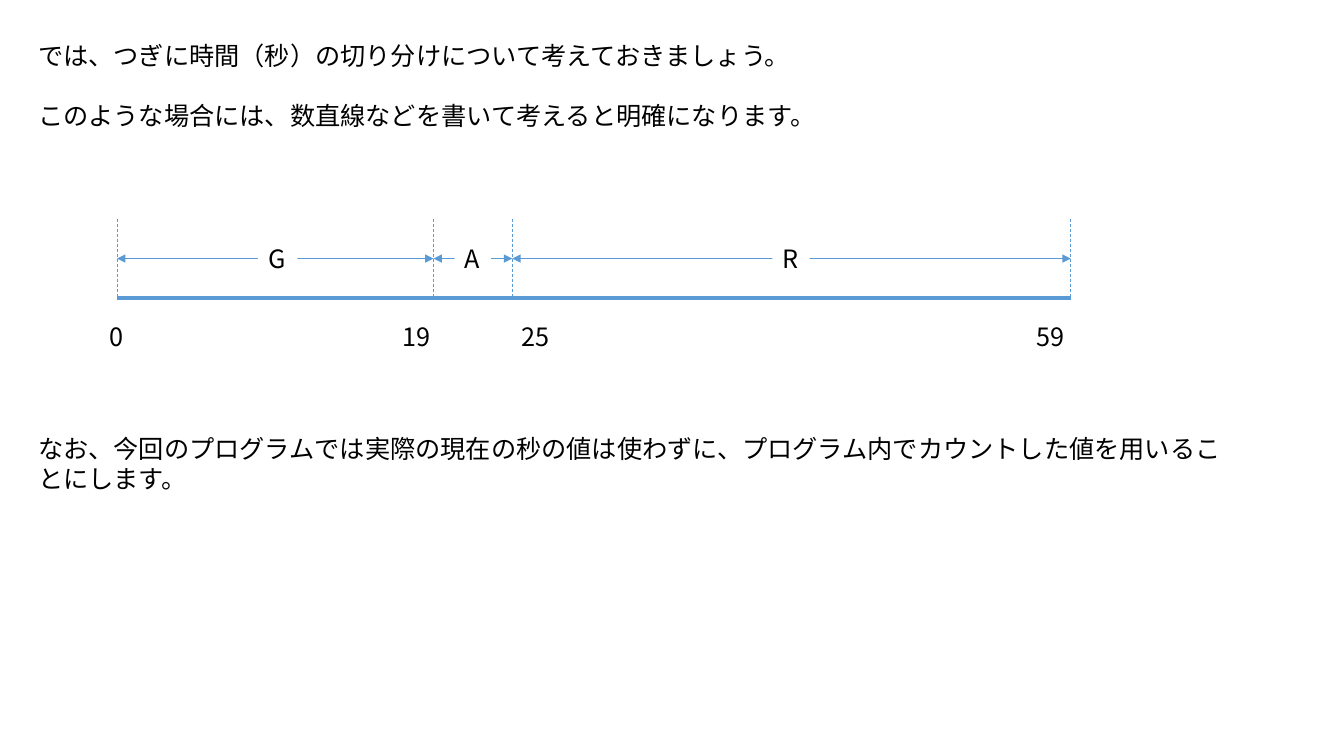
from pptx import Presentation
from pptx.dml.color import RGBColor
from pptx.enum.dml import MSO_LINE
from pptx.enum.shapes import MSO_CONNECTOR, MSO_SHAPE
from pptx.enum.text import MSO_ANCHOR, PP_ALIGN
from pptx.oxml.ns import qn
from pptx.util import Inches, Pt
from lxml import etree

STRAIGHT = MSO_CONNECTOR.STRAIGHT
RECTANGLE = MSO_SHAPE.RECTANGLE
DASH = MSO_LINE.DASH
TOP = MSO_ANCHOR.TOP
LEFT = PP_ALIGN.LEFT

FONT = "Noto Sans CJK JP"
BLUE, BLACK, WHITE = "5B9BD5", "000000", "FFFFFF"
LINE_PITCH = 21.6  # points from one text line to the next
LABEL_HEIGHT = 0.4

# Text, and the number of empty lines above it
EXPLANATION = [
    ("では、つぎに時間（秒）の切り分けについて考えておきましょう。", 0),
    ("このような場合には、数直線などを書いて考えると明確になります。", 1),
    ("なお、今回のプログラムでは実際の現在の秒の値は使わずに、"
     "プログラム内でカウントした値を用いることにします。", 10),
]
# Positions from the left end of the number line
TICKS = [0, 3.14, 3.92, 9.46]
# Text, left, width
SECONDS = [("0", -0.17, 0.34), ("19", 2.73, 0.48), ("25", 3.91, 0.48), ("59", 9.02, 0.48)]
PHASES = [("G", 1.4, 0.39), ("A", 3.35, 0.36), ("R", 6.5, 0.37)]


def color(value):
    return RGBColor.from_string(value)


def write(para, text, size=18, font=FONT, fill=BLACK):
    para.alignment = LEFT
    span = para.add_run()
    span.text = text
    span.font.size = Pt(size)
    span.font.name = font
    span.font.color.rgb = color(fill)
    east_asian = etree.SubElement(span.font._element, qn("a:ea"))
    east_asian.set("typeface", font)


def draw_line(page, start, end, width=0.5, dash=None, arrows=False):
    line = page.shapes.add_connector(STRAIGHT, *(Inches(v) for v in start + end))
    line.line.color.rgb = color(BLUE)
    line.line.width = Pt(width)
    if dash:
        line.line.dash_style = dash
    if arrows:
        for tag in ("a:headEnd", "a:tailEnd"):
            etree.SubElement(line.line._ln, qn(tag)).set("type", "triangle")
    etree.SubElement(line._element.spPr, qn("a:effectLst"))


def add_label(page, text, left, top, width, background=None):
    place = [Inches(v) for v in (left, top, width, LABEL_HEIGHT)]
    if background:
        box = page.shapes.add_shape(RECTANGLE, *place)
        box.shadow.inherit = False
        box.fill.solid()
        box.fill.fore_color.rgb = color(background)
        box.line.fill.background()
    else:
        box = page.shapes.add_textbox(*place)
    box.text_frame.word_wrap = False
    box.text_frame.vertical_anchor = TOP
    write(box.text_frame.paragraphs[0], text)


def add_explanation(page, left, top, width, height):
    box = page.shapes.add_textbox(*(Inches(v) for v in (left, top, width, height)))
    frame = box.text_frame
    frame.word_wrap = True
    for index, (text, lines_above) in enumerate(EXPLANATION):
        para = frame.add_paragraph() if index else frame.paragraphs[0]
        para.space_before = Pt(lines_above * LINE_PITCH)
        write(para, text)


def add_number_line(page, left, top, width, height):
    base = top + height
    middle = top + height / 2
    # Axis and dashed ticks
    draw_line(page, (left, base), (left + width, base), width=3)
    for tick in TICKS:
        draw_line(page, (left + tick, top), (left + tick, base), dash=DASH)
    # Arrows spanning each phase
    for start, end in zip(TICKS, TICKS[1:]):
        draw_line(page, (left + start, middle), (left + end, middle), arrows=True)
    # Seconds under the axis, phase names on the arrows
    for text, offset, label_width in SECONDS:
        add_label(page, text, left + offset, base + 0.18, label_width)
    for text, offset, label_width in PHASES:
        add_label(page, text, left + offset, middle - LABEL_HEIGHT / 2, label_width,
                  background=WHITE)


def main():
    deck = Presentation()
    deck.slide_width, deck.slide_height = Inches(13.33), Inches(7.5)
    page = deck.slides.add_slide(deck.slide_layouts[6])
    add_explanation(page, 0.28, 0.35, 12.17, 4.64)
    add_number_line(page, 1.16, 2.17, TICKS[-1], 0.79)
    deck.save("out.pptx")


if __name__ == "__main__":
    main()
